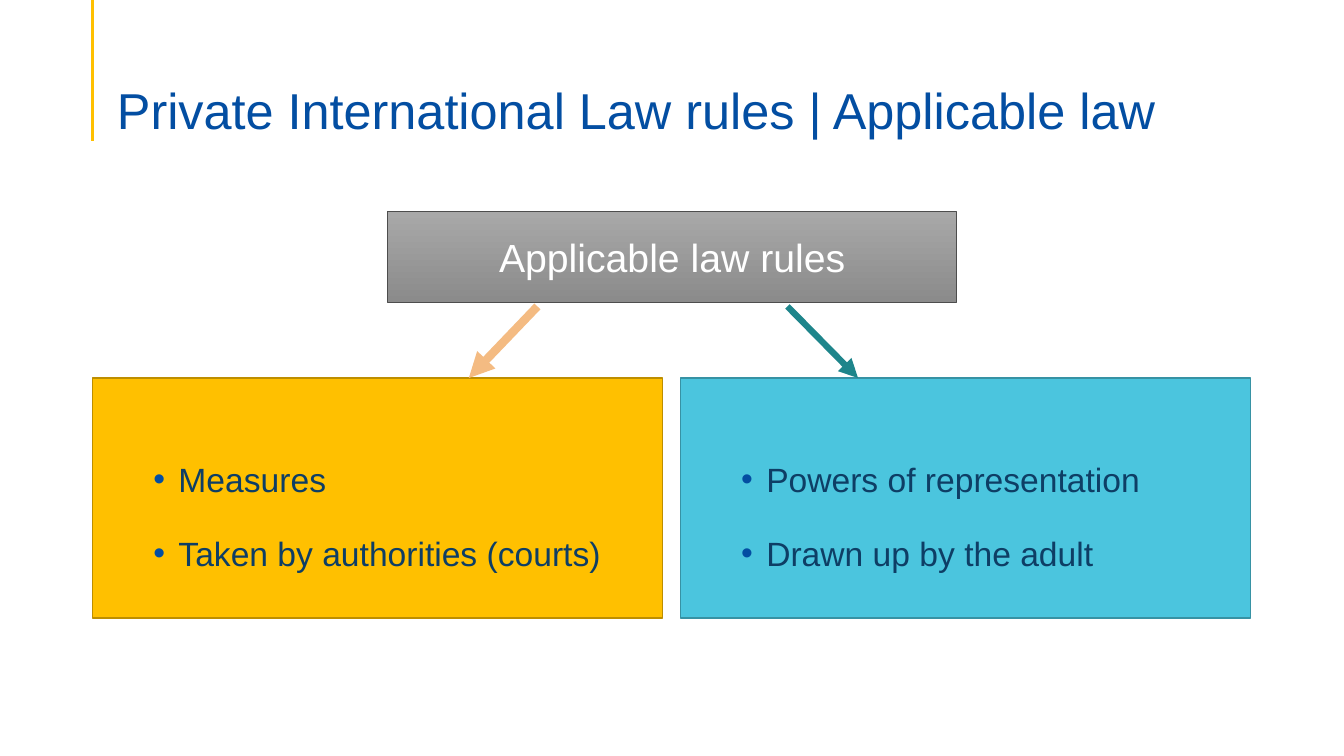
import lxml.etree
import pptx
import pptx.dml.color
import pptx.enum.shapes
import pptx.enum.text
import pptx.oxml.ns
import pptx.util

# Grid in inches: two equal columns between the margins
SLIDE_WIDTH, SLIDE_HEIGHT = 13.33, 7.5
MARGIN, COLUMN, GAP = 0.92, 5.65, 0.18
HEADING_TOP, HEADING_HEIGHT = 2.1, 0.9
BOX_TOP, BOX_HEIGHT = 3.75, 2.38
ARROW_TOP = 3.04

BLUE, NAVY, WHITE, GOLD = "034EA2", "0E3E65", "FFFFFF", "FFC000"

ALIGN = pptx.enum.text.PP_ALIGN
ANCHOR = pptx.enum.text.MSO_ANCHOR
qn = pptx.oxml.ns.qn


def column_left(index):
    return MARGIN + index * (COLUMN + GAP)


def set_color(color_format, color):
    color_format.rgb = pptx.dml.color.RGBColor.from_string(color)


def set_line(line, color, width):
    line.width = pptx.util.Pt(width)
    line.fill.solid()
    set_color(line.fill.fore_color, color)


def place(shape, left, top, width, height):
    shape.left, shape.top, shape.width, shape.height = (
        pptx.util.Inches(length) for length in (left, top, width, height))


def add_bullet(paragraph, color):
    paragraph.level = 1
    properties = paragraph._p.get_or_add_pPr()
    properties.set("marL", str(pptx.util.Inches(0.75)))
    properties.set("indent", str(pptx.util.Inches(-0.25)))
    bullet_color = lxml.etree.SubElement(properties, qn("a:buClr"))
    lxml.etree.SubElement(bullet_color, qn("a:srgbClr"), val=color)
    lxml.etree.SubElement(properties, qn("a:buFont"), typeface="Arial")
    lxml.etree.SubElement(properties, qn("a:buChar"), char="•")


def write_text(shape, lines, size, color, align=ALIGN.LEFT, anchor=ANCHOR.TOP,
               inset_top=0.05, inset_bottom=0.05, line_spacing=1.0,
               space_between=(0, 0), bullet=None):
    frame = shape.text_frame
    frame.word_wrap = True
    frame.auto_size = pptx.enum.text.MSO_AUTO_SIZE.NONE
    frame.vertical_anchor = anchor
    frame.margin_top = pptx.util.Inches(inset_top)
    frame.margin_bottom = pptx.util.Inches(inset_bottom)
    before, after = space_between
    for index, line in enumerate(lines):
        paragraph = frame.add_paragraph() if index else frame.paragraphs[0]
        if bullet:
            add_bullet(paragraph, bullet)
        paragraph.alignment = align
        paragraph.line_spacing = line_spacing
        paragraph.space_before = pptx.util.Pt(before if index else 0)
        paragraph.space_after = pptx.util.Pt(after)
        run = paragraph.add_run()
        run.text = line
        run.font.name = "Arial"
        run.font.size = pptx.util.Pt(size)
        run.font.bold = False
        set_color(run.font.color, color)


def add_line(slide, start, end, color, width, arrow=False):
    points = [pptx.util.Inches(length) for length in (*start, *end)]
    connector = slide.shapes.add_connector(
        pptx.enum.shapes.MSO_CONNECTOR.STRAIGHT, *points)
    set_line(connector.line, color, width)
    if arrow:
        lxml.etree.SubElement(connector.line._get_or_add_ln(),
                              qn("a:tailEnd"), type="triangle")
    lxml.etree.SubElement(connector._element.spPr, qn("a:effectLst"))


def fill_heading(shape, text):
    place(shape, (SLIDE_WIDTH - COLUMN) / 2, HEADING_TOP, COLUMN, HEADING_HEIGHT)
    shape.fill.gradient()
    shape.fill.gradient_angle = 270
    for stop, color in zip(shape.fill.gradient_stops, ("A8A8A8", "8B8B8B")):
        set_color(stop.color, color)
    set_line(shape.line, "4D4D4D", 0.5)
    write_text(shape, [text], 28, WHITE, align=ALIGN.CENTER, anchor=ANCHOR.MIDDLE)


def fill_list_box(shape, column, lines, fill, outline):
    place(shape, column_left(column), BOX_TOP, COLUMN, BOX_HEIGHT)
    shape.fill.solid()
    set_color(shape.fill.fore_color, fill)
    set_line(shape.line, outline, 1)
    write_text(shape, lines, 24, NAVY, inset_top=0.8,
               space_between=(6, 18), bullet=BLUE)


def main():
    presentation = pptx.Presentation()
    presentation.slide_width = pptx.util.Inches(SLIDE_WIDTH)
    presentation.slide_height = pptx.util.Inches(SLIDE_HEIGHT)
    comparison = presentation.slide_layouts.get_by_name("Comparison")
    slide = presentation.slides.add_slide(comparison)
    title, heading, left_box, unused, right_box = slide.placeholders
    unused._element.getparent().remove(unused._element)

    # Title with its accent line
    add_line(slide, (MARGIN, 0), (MARGIN, 1.4), GOLD, 2.25)
    place(title, 1.06, 0.53, 11.5, 0.86)
    write_text(title, ["Private International Law rules | Applicable law"], 36,
               BLUE, anchor=ANCHOR.BOTTOM, inset_bottom=0, line_spacing=0.9)

    # Heading and the two kinds of rules
    fill_heading(heading, "Applicable law rules")
    fill_list_box(left_box, 0, ["Measures", "Taken by authorities (courts)"],
                  GOLD, "BD8E00")
    fill_list_box(right_box, 1, ["Powers of representation", "Drawn up by the adult"],
                  "4BC5DE", "3792A4")

    # Arrows from the heading to the boxes
    add_line(slide, (5.33, ARROW_TOP), (4.65, BOX_TOP), "F4BB82", 6, arrow=True)
    add_line(slide, (7.81, ARROW_TOP), (8.51, BOX_TOP), "1E858B", 4.5, arrow=True)

    presentation.save("out.pptx")


if __name__ == "__main__":
    main()
